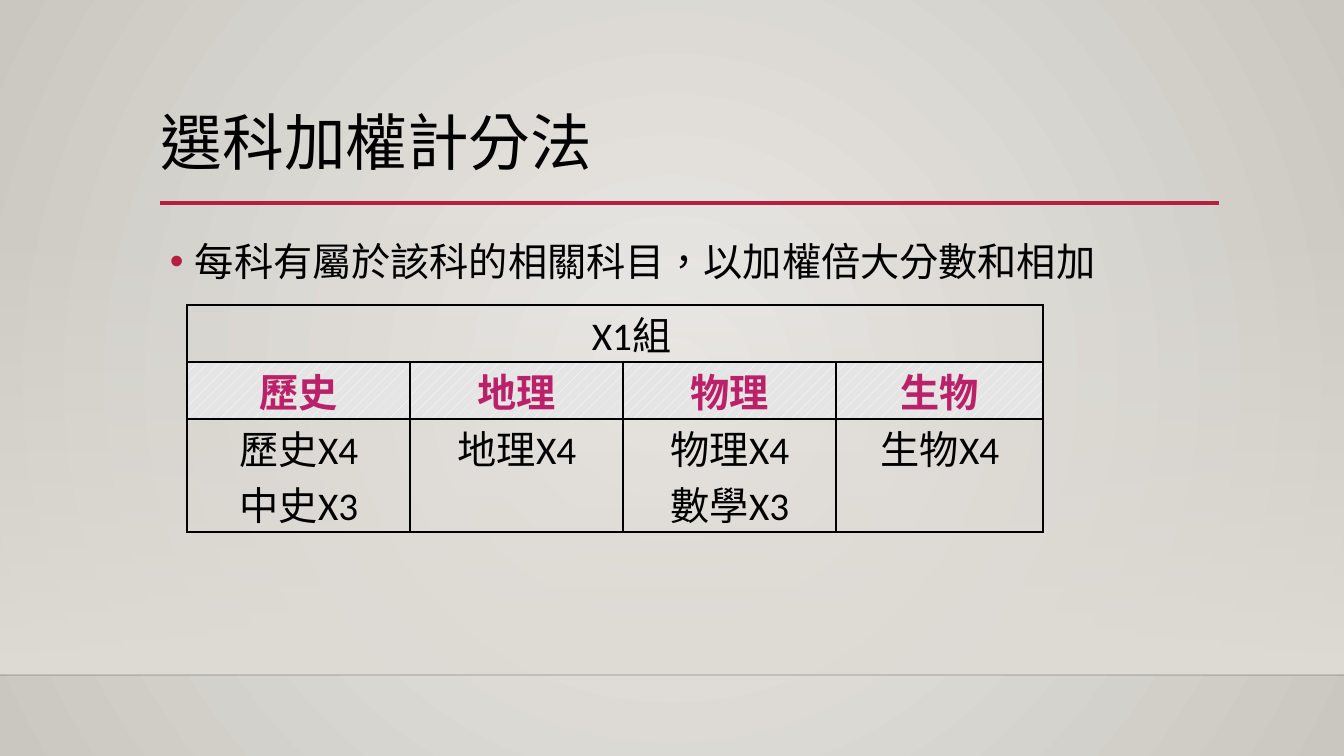
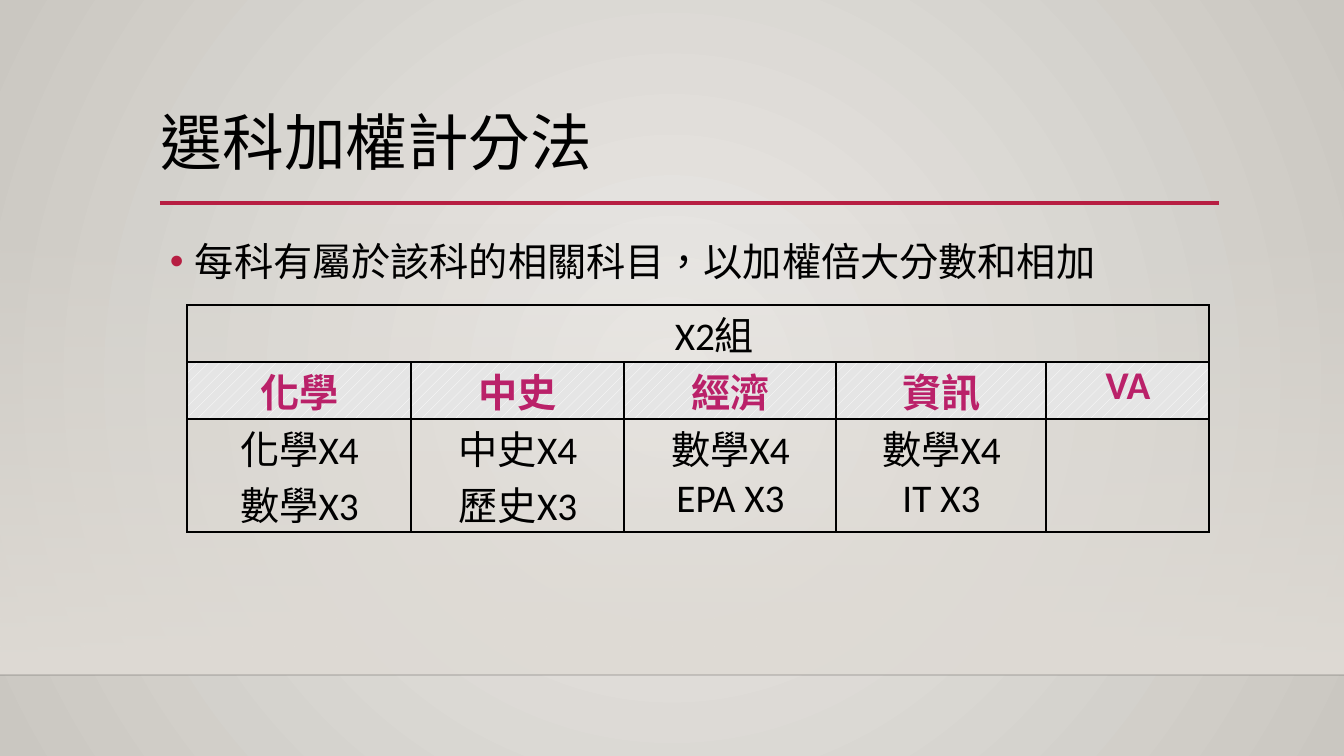
from dataclasses import dataclass

from lxml.etree import SubElement
from pptx import Presentation
from pptx.dml.color import RGBColor as Rgb
from pptx.enum.dml import MSO_PATTERN
from pptx.enum.lang import MSO_LANGUAGE_ID as Language
from pptx.enum.shapes import MSO_CONNECTOR, MSO_SHAPE
from pptx.enum.text import PP_ALIGN
from pptx.oxml import parse_xml
from pptx.oxml.ns import nsdecls, qn
from pptx.util import Emu, Pt

PX = 914400 / 100.8
WIDTH, HEIGHT = 1344, 756
FLOOR_TOP, FLOOR_BOTTOM = 223, 675
ROW_HEIGHTS = [57, 57, 113]


@dataclass(frozen=True)
class Theme:
    font: str = "Calibri"
    title_size: int = 44
    text_size: int = 28
    ink: str = "000000"
    accent: str = "B71E42"
    subject: str = "BA2169"
    glow: str = "ECEAE7"
    edge: str = "CAC7C1"
    floor: str = "DFDBD5"
    hatch: str = "FFFFFF"
    hatch_ground: str = "E5E5E5"


theme = Theme()
TITLE = "選科加權計分法"
RULE_TEXT = "每科有屬於該科的相關科目，以加權倍大分數和相加"
GROUPS = [
    ("X1組", [223, 213, 213, 207],
     ["歷史", "地理", "物理", "生物"],
     ["歷史X4\n中史X3", "地理X4", "物理X4\n數學X3", "生物X4"]),
    ("X2組", [224, 213, 212, 210, 163],
     ["化學", "中史", "經濟", "資訊", "VA"],
     ["化學X4\n數學X3", "中史X4\n歷史X3", "數學X4\nEPA X3", "數學X4\nIT X3", ""]),
]


def px(*lengths):
    """Turn pixels into EMU."""
    return [Emu(round(length * PX)) for length in lengths]


def style(para, size, color=theme.ink, bold=False):
    para.font.name = theme.font
    para.font.size = Pt(size)
    para.font.bold = bold
    para.font.color.rgb = Rgb.from_string(color)
    para.font.language_id = Language.TRADITIONAL_CHINESE


deck = Presentation()
deck.slide_width, deck.slide_height = px(WIDTH, HEIGHT)

backdrop = deck.slide_master.background.fill
backdrop.gradient()
for stop, color in zip(backdrop.gradient_stops, (theme.glow, theme.edge)):
    stop.color.rgb = Rgb.from_string(color)
gradient = deck.slide_master.element.find(".//" + qn("a:gradFill"))
gradient.replace(gradient.find(qn("a:lin")), parse_xml(
    f'<a:path {nsdecls("a")} path="circle">'
    '<a:fillToRect l="50000" t="50000" r="50000" b="50000"/></a:path>'))

for group, column_widths, subjects, weights in GROUPS:
    page = deck.slides.add_slide(deck.slide_layouts[6])

    floor = page.shapes.add_shape(
        MSO_SHAPE.RECTANGLE, *px(0, FLOOR_TOP, WIDTH, FLOOR_BOTTOM - FLOOR_TOP))
    floor.shadow.inherit = False
    floor.line.fill.background()
    floor.fill.gradient()
    floor.fill.gradient_angle = 270
    for stop in floor.fill.gradient_stops:
        stop.color.rgb = Rgb.from_string(theme.floor)
    clear_color = floor.element.spPr.find(".//" + qn("a:srgbClr"))
    SubElement(clear_color, qn("a:alpha"), val="0")

    for left, right, y, color, weight, opacity in (
        (0, WIDTH, FLOOR_BOTTOM, theme.ink, 1, 20),
        (160, 1219, 203, theme.accent, 2.5, 100),
    ):
        rule = page.shapes.add_connector(MSO_CONNECTOR.STRAIGHT, *px(left, y, right, y))
        rule.line.width = Pt(weight)
        rule.line.color.rgb = Rgb.from_string(color)
        properties = rule.element.spPr
        SubElement(properties.find(".//" + qn("a:srgbClr")), qn("a:alpha"),
                   val=str(opacity * 1000))
        SubElement(properties, qn("a:effectLst"))

    for text, area, size, spacing, bulleted in (
        (TITLE, (151, 107, 1058, 116), theme.title_size, 0.9, False),
        (RULE_TEXT, (160, 223, 1058, 380), theme.text_size, 1.2, True),
    ):
        box = page.shapes.add_textbox(*px(*area))
        box.text_frame.word_wrap = True
        para = box.text_frame.paragraphs[0]
        para.text = text
        para.line_spacing = spacing
        if bulleted:
            layout = para._p.get_or_add_pPr()
            indent = px(25)[0]
            layout.set("marL", str(indent))
            layout.set("indent", str(-indent))
            bullet_color = SubElement(layout, qn("a:buClr"))
            SubElement(bullet_color, qn("a:srgbClr"), val=theme.accent)
            SubElement(layout, qn("a:buFont"), typeface="Arial")
            SubElement(layout, qn("a:buChar"), char="•")
        style(para, size)

    frame = page.shapes.add_table(
        len(ROW_HEIGHTS), len(column_widths),
        *px(187, 305, sum(column_widths), sum(ROW_HEIGHTS)))
    table = frame.table
    table.first_row = table.horz_banding = False
    for row, height in zip(table.rows, px(*ROW_HEIGHTS)):
        row.height = height
    for column, width in zip(table.columns, px(*column_widths)):
        column.width = width
    table.cell(0, 0).merge(table.cell(0, len(column_widths) - 1))

    group_row = [group] + [""] * (len(column_widths) - 1)
    for row_index, texts in enumerate((group_row, subjects, weights)):
        is_subject = row_index == 1
        for column_index, text in enumerate(texts):
            cell = table.cell(row_index, column_index)
            cell.margin_left, cell.margin_right = px(7, 7)
            cell.margin_top = cell.margin_bottom = 0
            if is_subject:
                cell.fill.patterned()
                cell.fill.pattern = MSO_PATTERN.PERCENT_10
                cell.fill.fore_color.rgb = Rgb.from_string(theme.hatch)
                cell.fill.back_color.rgb = Rgb.from_string(theme.hatch_ground)
            else:
                cell.fill.background()
            for position, side in enumerate(("lnL", "lnR", "lnT", "lnB")):
                cell._tc.get_or_add_tcPr().insert(position, parse_xml(
                    f'<a:{side} {nsdecls("a")} w="{Pt(1)}"><a:solidFill>'
                    f'<a:srgbClr val="{theme.ink}"/></a:solidFill></a:{side}>'))
            if not text:
                continue
            cell.text = text
            for para in cell.text_frame.paragraphs:
                para.alignment = PP_ALIGN.CENTER
                margin = px(33 if row_index == 0 else 1)[0]
                para._p.get_or_add_pPr().set("marL", str(margin))
                style(para, theme.text_size,
                      theme.subject if is_subject else theme.ink, is_subject)

deck.save("out.pptx")
